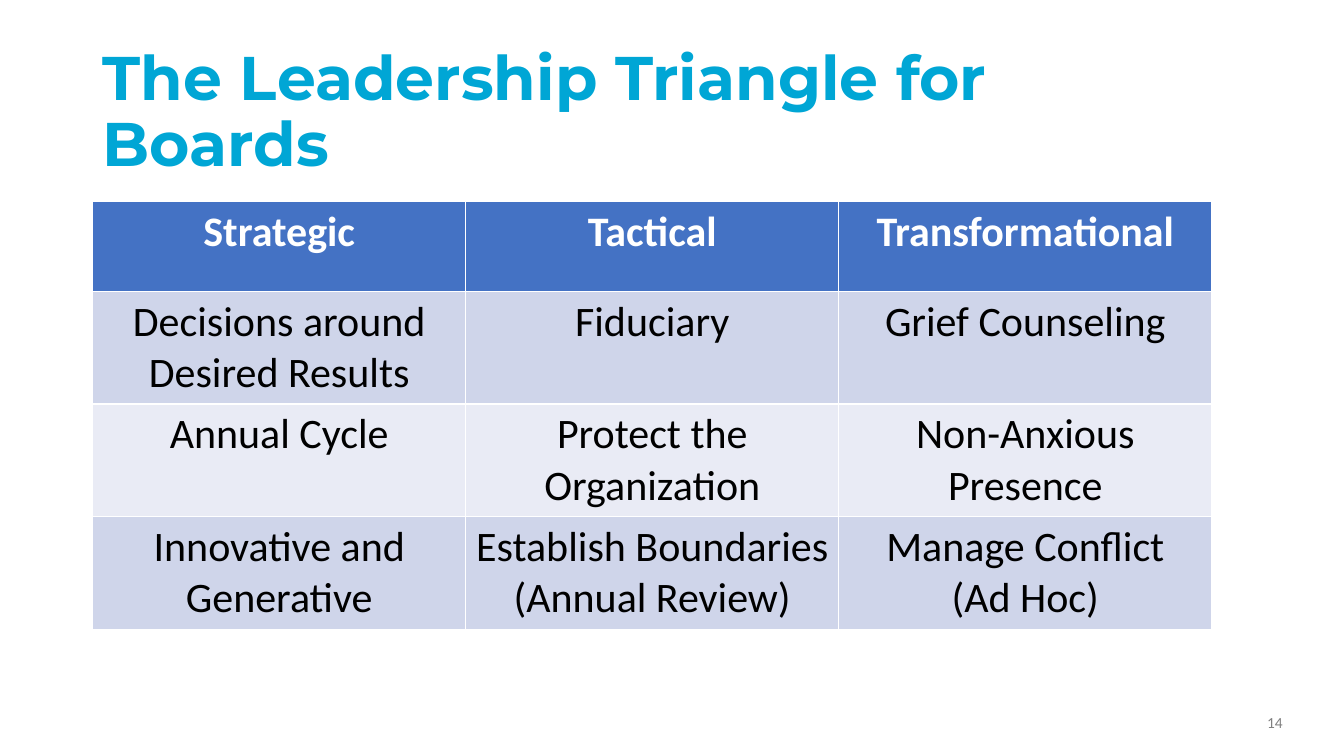
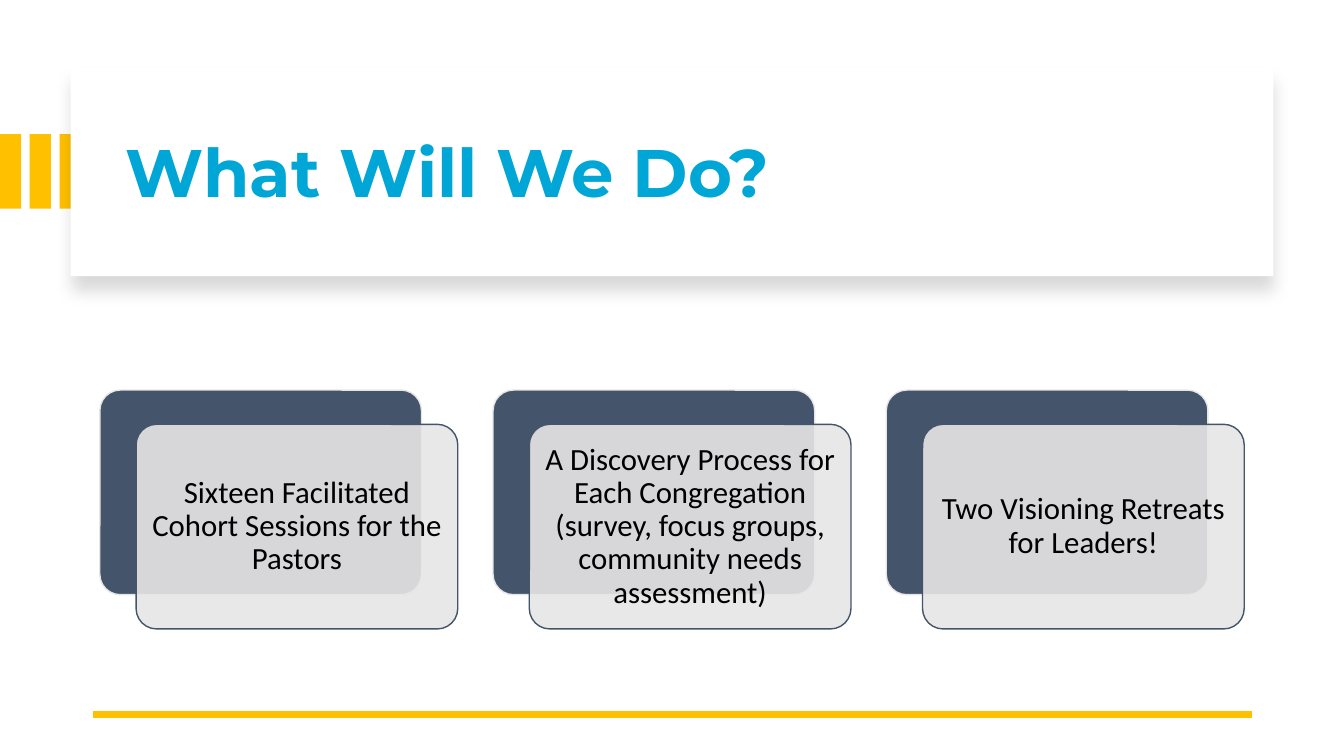
import pptx
import pptx.util
import pptx.dml.color
import pptx.enum.shapes
import pptx.enum.text
import pptx.oxml
import pptx.oxml.ns

Inches = pptx.util.Inches
Pt = pptx.util.Pt
SHAPE = pptx.enum.shapes.MSO_SHAPE
ALIGN = pptx.enum.text.PP_ALIGN
ANCHOR = pptx.enum.text.MSO_ANCHOR

COLOURS = {
    "title": "00A6D5", "gold": "FFC000", "white": "FFFFFF", "black": "000000",
    "grey": "808080", "header": "4472C4", "band_dark": "CFD5EA",
    "band_light": "E9EBF5", "slate": "44546A", "pale": "E7E6E6",
}
COLOURS = {name: pptx.dml.color.RGBColor.from_string(code) for name, code in COLOURS.items()}
TITLE = {"name": "Montserrat", "bold": True}
BODY = {"name": "Calibri", "bold": False}


def write(frame, text, colour, align, spacing=None, **font):
    """Fill a text frame, one paragraph per line, in one format."""
    frame.text = text
    for para in frame.paragraphs:
        para.alignment = align
        para.line_spacing = spacing
        for span in para.runs:
            for key, value in font.items():
                setattr(span.font, key, value)
            span.font.color.rgb = COLOURS[colour]


def add_panel(page, kind, left, top, width, height, fill, line=None):
    panel = page.shapes.add_shape(kind, Inches(left), Inches(top), Inches(width), Inches(height))
    panel.shadow.inherit = False
    panel.fill.solid()
    panel.fill.fore_color.rgb = COLOURS[fill]
    if line:
        panel.line.color.rgb = COLOURS[line]
        panel.line.width = Pt(1)
    else:
        panel.line.fill.background()
    return panel


deck = pptx.Presentation()
deck.slide_width, deck.slide_height = Inches(13.33), Inches(7.5)

# Both pages: title placeholder
titles = [
    ("The Leadership Triangle for Boards", 44, (0.92, 0.4, 9.67, 1.45)),
    ("What Will We Do?", 48, (1.14, 0.89, 11.13, 1.7)),
]
pages = []
for text, size, place in titles:
    page = deck.slides.add_slide(deck.slide_layouts[5])
    title = page.shapes.title
    title.left, title.top, title.width, title.height = map(Inches, place)
    title.text_frame.auto_size = pptx.enum.text.MSO_AUTO_SIZE.NONE
    title.text_frame.vertical_anchor = ANCHOR.MIDDLE
    write(title.text_frame, text, "title", ALIGN.LEFT, 0.9, size=Pt(size), **TITLE)
    pages.append(page)
triangle_page, plan_page = pages

# Page 1: leadership table and page number
rows = [
    ["Strategic", "Tactical", "Transformational"],
    ["Decisions around Desired Results", "Fiduciary", "Grief Counseling"],
    ["Annual Cycle", "Protect the Organization", "Non-Anxious Presence"],
    ["Innovative and Generative", "Establish Boundaries\n(Annual Review)",
     "Manage Conflict\n(Ad Hoc)"],
]
table = triangle_page.shapes.add_table(
    len(rows), 3, Inches(0.92), Inches(2), Inches(11.1), Inches(4.19)).table
for column in table.columns:
    column.width = Inches(3.7)
for r, row in enumerate(rows):
    is_header = r == 0
    table.rows[r].height = Inches(0.89 if is_header else 1.1)
    fill = "header" if is_header else ("band_light", "band_dark")[r % 2]
    for c, text in enumerate(row):
        cell = table.cell(r, c)
        cell.fill.solid()
        cell.fill.fore_color.rgb = COLOURS[fill]
        write(cell.text_frame, text, "white" if is_header else "black", ALIGN.CENTER,
              name="Calibri", size=Pt(30), bold=is_header)

number = triangle_page.shapes.add_textbox(Inches(12.42), Inches(7.03), Inches(0.45), Inches(0.29))
number.text_frame.word_wrap = True
write(number.text_frame, "14", "grey", ALIGN.CENTER, size=Pt(11), **BODY)

# Page 2: gold bars behind a raised title card
for i in range(3):
    add_panel(plan_page, SHAPE.RECTANGLE, i * 0.295, 1.33, 0.21, 0.74, "gold")
card = add_panel(plan_page, SHAPE.RECTANGLE, 0.7, 0.67, 11.93, 2.07, "white")
effects = card.element.spPr.find(pptx.oxml.ns.qn("a:effectLst"))
effects.append(pptx.oxml.parse_xml(
    f'<a:outerShdw {pptx.oxml.ns.nsdecls("a")} blurRad="{Pt(11)}" dist="{Pt(10)}" '
    'dir="5400000" algn="t" rotWithShape="0">'
    f'<a:srgbClr val="{COLOURS["black"]}"><a:alpha val="15000"/></a:srgbClr></a:outerShdw>'))
card.element.addnext(plan_page.shapes.title.element)

rule = plan_page.shapes.add_connector(
    pptx.enum.shapes.MSO_CONNECTOR.STRAIGHT, Inches(12.42), Inches(7.09), Inches(0.92), Inches(7.09))
rule.line.color.rgb = COLOURS["gold"]
rule.line.width = Pt(4.5)
rule.element.spPr.append(pptx.oxml.parse_xml(f'<a:effectLst {pptx.oxml.ns.nsdecls("a")}/>'))

# Page 2: three steps, each a translucent label over a dark block
steps = [
    "Sixteen Facilitated Cohort Sessions for the Pastors",
    "A Discovery Process for Each Congregation (survey, focus groups, community needs assessment)",
    "Two Visioning Retreats for Leaders!",
]
for i, text in enumerate(steps):
    left = 0.99 + i * 3.9
    block = add_panel(plan_page, SHAPE.ROUNDED_RECTANGLE, left, 3.87, 3.19, 2.03, "slate", "pale")
    label = add_panel(plan_page, SHAPE.ROUNDED_RECTANGLE, left + 0.36, 4.21, 3.19, 2.03,
                      "pale", "slate")
    for panel in (block, label):
        panel.adjustments[0] = 0.1
    colour = label.element.spPr.find(pptx.oxml.ns.qn("a:solidFill"))[0]
    colour.append(pptx.oxml.parse_xml(f'<a:alpha {pptx.oxml.ns.nsdecls("a")} val="90000"/>'))
    frame = label.text_frame
    frame.word_wrap = True
    frame.vertical_anchor = ANCHOR.MIDDLE
    for side in ("left", "top", "right", "bottom"):
        setattr(frame, f"margin_{side}", Inches(0.09))
    write(frame, text, "black", ALIGN.CENTER, 0.9, size=Pt(22), **BODY)

deck.save("out.pptx")
